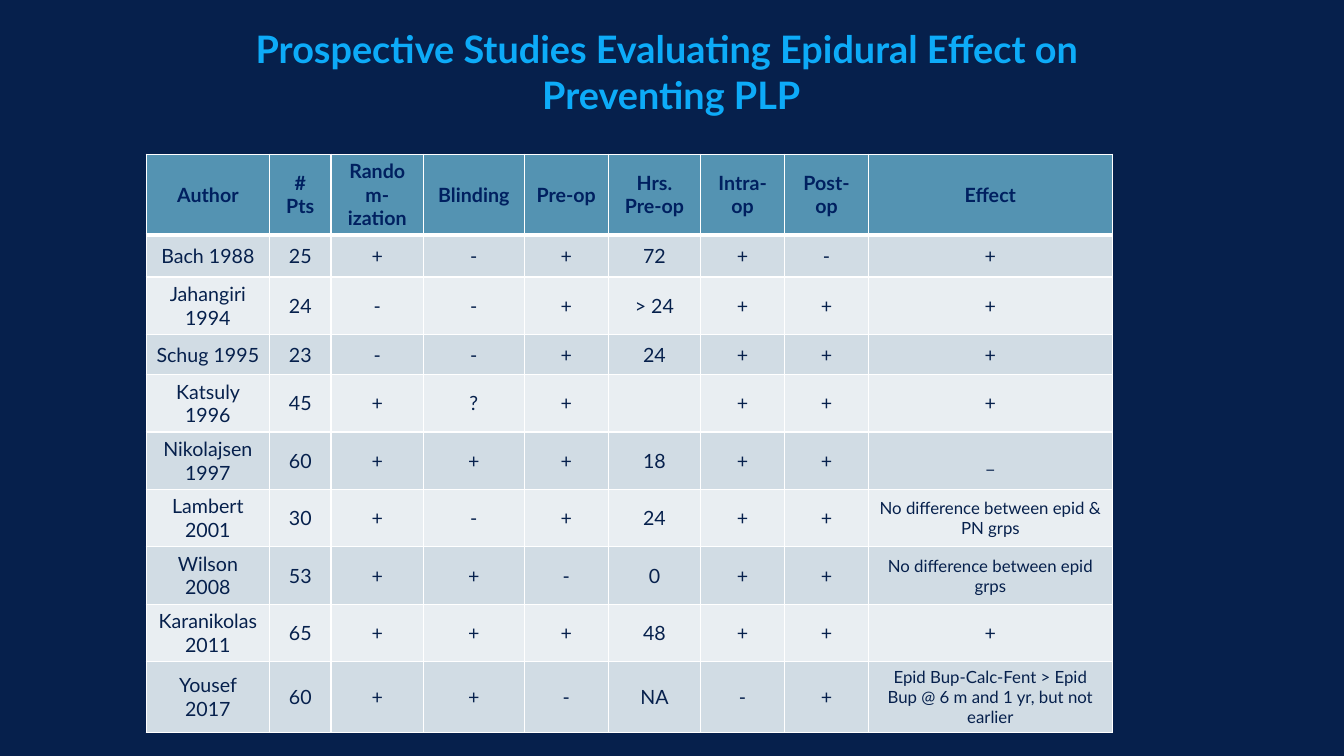
from dataclasses import astuple, dataclass

from lxml.etree import SubElement
from pptx import Presentation
from pptx.dml.color import RGBColor
from pptx.enum.text import MSO_ANCHOR, MSO_AUTO_SIZE, PP_ALIGN
from pptx.oxml.ns import qn
from pptx.slide import Slide
from pptx.table import _Cell
from pptx.text.text import TextFrame
from pptx.util import Pt

NAVY, SKY, WHITE = "06204C", "0DABF8", "FFFFFF"
HEADER_TEXT, HEADER_FILL = "002060", "5493B2"
BAND_FILLS = ("D1DCE4", "E9EEF2")
TITLE = "Prospective Studies Evaluating Epidural Effect on \vPreventing PLP"
COLUMN_WIDTHS = (88, 44, 66, 72, 60, 66, 60, 60, 174)
HEADER_HEIGHT = 45.4


@dataclass(frozen=True)
class Study:
    author: str
    patients: str
    randomized: str
    blinding: str
    pre_op: str
    hours_pre_op: str
    intra_op: str
    post_op: str
    effect: str


HEADER = Study("Author", "# Pts", "Random-ization", "Blinding", "Pre-op",
               "Hrs. Pre-op", "Intra-op", "Post-op", "Effect")
STUDIES = (
    Study("Bach 1988", "25", "+", "-", "+", "72", "+", "-", "+"),
    Study("Jahangiri 1994", "24", "-", "-", "+", "> 24", "+", "+", "+"),
    Study("Schug 1995", "23", "-", "-", "+", "24", "+", "+", "+"),
    Study("Katsuly 1996", "45", "+", "?", "+", "", "+", "+", "+"),
    Study("Nikolajsen 1997", "60", "+", "+", "+", "18", "+", "+", "_"),
    Study("Lambert 2001", "30", "+", "-", "+", "24", "+", "+",
          "No difference between epid & PN grps"),
    Study("Wilson 2008", "53", "+", "+", "-", "0", "+", "+",
          "No difference between epid grps"),
    Study("Karanikolas 2011", "65", "+", "+", "+", "48", "+", "+", "+"),
    Study("Yousef 2017", "60", "+", "+", "-", "NA", "-", "+",
          "Epid Bup-Calc-Fent > Epid Bup @ 6 m and 1 yr, but not earlier"),
)
STUDY_HEIGHTS = (30, 41, 28.8, 41, 41, 41, 41, 41, 50.4)


def color(hex_value: str) -> RGBColor:
    return RGBColor.from_string(hex_value)


def write_text(frame: TextFrame, text: str, size: float, hex_value: str, bold: bool) -> None:
    frame.text = text
    para = frame.paragraphs[0]
    para.alignment = PP_ALIGN.CENTER
    font_format = {"name": "Lato", "size": Pt(size), "bold": bold}
    for font in [para.font, *(span.font for span in para.runs)]:
        for attribute, value in font_format.items():
            setattr(font, attribute, value)
        font.color.rgb = color(hex_value)


def set_borders(cell: _Cell, top: float, bottom: float) -> None:
    """Give the cell white edges, with top and bottom widths in points."""
    properties = cell._tc.get_or_add_tcPr()
    widths = {"a:lnL": 1, "a:lnR": 1, "a:lnT": top, "a:lnB": bottom}
    for position, (tag, width) in enumerate(widths.items()):
        line = properties.makeelement(qn(tag), {"w": str(Pt(width))})
        fill = SubElement(line, qn("a:solidFill"))
        SubElement(fill, qn("a:srgbClr"), val=WHITE)
        properties.insert(position, line)


def add_title(page: Slide) -> None:
    title = page.shapes.title
    title.left, title.top, title.width, title.height = Pt(62), Pt(18), Pt(835), Pt(66)
    frame = title.text_frame
    frame_format = {
        "word_wrap": True, "auto_size": MSO_AUTO_SIZE.NONE,
        "vertical_anchor": MSO_ANCHOR.MIDDLE,
        "margin_left": 0, "margin_right": 0,
        "margin_top": Pt(0.7), "margin_bottom": Pt(0.7),
    }
    for attribute, value in frame_format.items():
        setattr(frame, attribute, value)
    write_text(frame, TITLE, 27, SKY, True)


def add_study_table(page: Slide) -> None:
    rows = (HEADER, *STUDIES)
    heights = (HEADER_HEIGHT, *STUDY_HEIGHTS)
    table = page.shapes.add_table(
        len(rows), len(COLUMN_WIDTHS), Pt(104.5), Pt(110.2),
        Pt(sum(COLUMN_WIDTHS)), Pt(sum(heights))).table
    for column, width in zip(table.columns, COLUMN_WIDTHS):
        column.width = Pt(width)
    for row_index, (study, height) in enumerate(zip(rows, heights)):
        table.rows[row_index].height = Pt(height)
        is_header = row_index == 0
        fill = HEADER_FILL if is_header else BAND_FILLS[(row_index - 1) % 2]
        text_color = HEADER_TEXT if is_header else NAVY
        for column_index, text in enumerate(astuple(study)):
            cell = table.cell(row_index, column_index)
            cell.vertical_anchor = MSO_ANCHOR.MIDDLE
            cell.fill.solid()
            cell.fill.fore_color.rgb = color(fill)
            set_borders(cell, top=3 if row_index == 1 else 1, bottom=3 if is_header else 1)
            is_sentence = len(text) > 20
            write_text(cell.text_frame, text, 12 if is_sentence else 14, text_color, is_header)


def main() -> None:
    deck = Presentation()
    deck.slide_width, deck.slide_height = Pt(960), Pt(540)
    page = deck.slides.add_slide(deck.slide_layouts.get_by_name("Title Only"))
    page.background.fill.solid()
    page.background.fill.fore_color.rgb = color(NAVY)
    add_title(page)
    add_study_table(page)
    deck.save("out.pptx")


if __name__ == "__main__":
    main()
